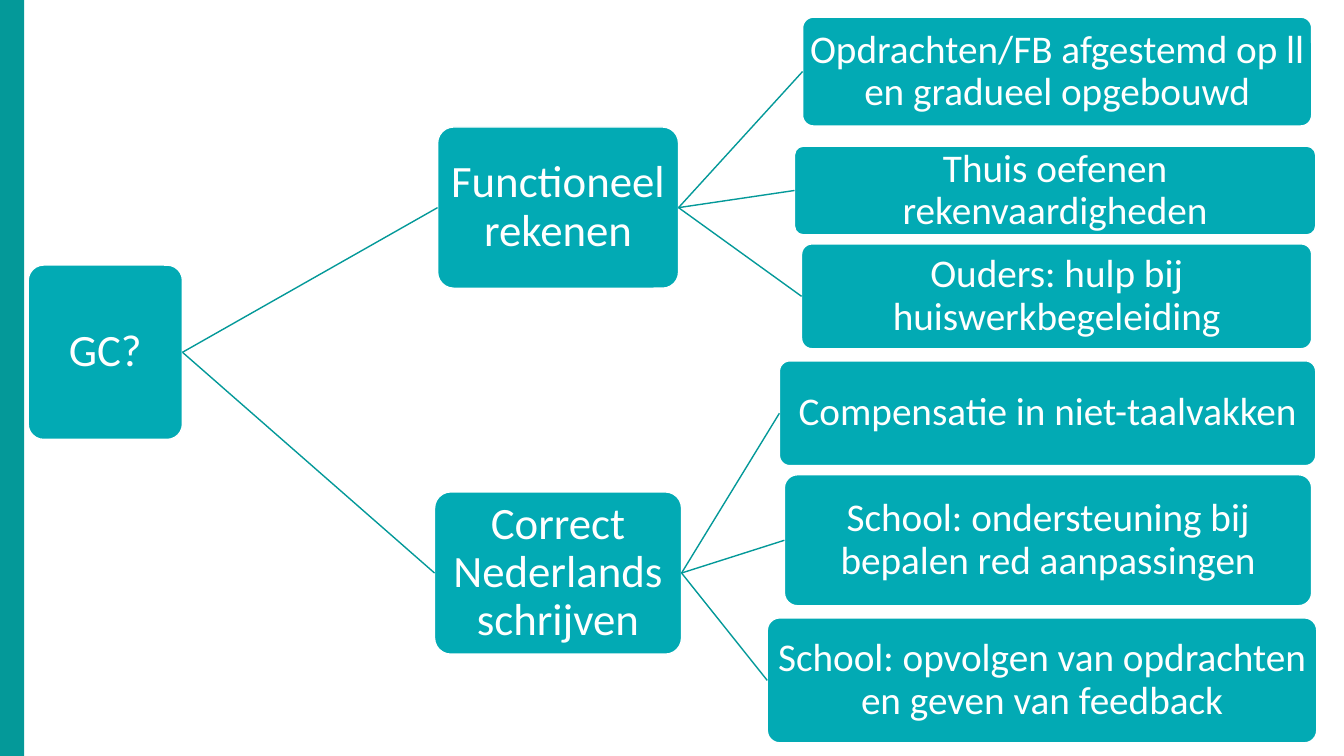
import pptx
import pptx.dml.color
import pptx.enum.shapes
import pptx.enum.text
import pptx.util
from lxml import etree

Inches = pptx.util.Inches
Pt = pptx.util.Pt
SHAPES = pptx.enum.shapes.MSO_SHAPE

TEAL = pptx.dml.color.RGBColor(0x04, 0x99, 0x99)
TURQUOISE = pptx.dml.color.RGBColor(0x02, 0xAA, 0xB4)
WHITE = pptx.dml.color.RGBColor(0xFF, 0xFF, 0xFF)

SLIDE_BOX = (0, 0, 13.33, 7.5)
TREE_BOX = (0.28, 0.17, 12.78, 7.2)
LEFT_SITE, RIGHT_SITE = 1, 3

FRAME_FORMAT = {
    "word_wrap": True,
    "vertical_anchor": pptx.enum.text.MSO_ANCHOR.MIDDLE,
    "margin_left": Inches(0.02),
    "margin_top": Inches(0.02),
    "margin_right": Inches(0.02),
    "margin_bottom": Inches(0.02),
}
PARAGRAPH_FORMAT = {
    "alignment": pptx.enum.text.PP_ALIGN.CENTER,
    "line_spacing": 0.9,
}

QUESTION = ("GC?", (0, 2.46, 1.53, 1.73))
BRANCHES = [
    ("Functioneel rekenen", (4.06, 1.09, 2.39, 1.6), [
        ("Opdrachten/FB afgestemd op ll en gradueel opgebouwd", (7.68, 0, 5.05, 1.08)),
        ("Thuis oefenen rekenvaardigheden", (7.6, 1.28, 5.17, 0.88)),
        ("Ouders: hulp bij huiswerkbegeleiding", (7.67, 2.25, 5.06, 1.04)),
    ]),
    ("Correct Nederlands schrijven", (4.03, 4.71, 2.45, 1.61), [
        ("Compensatie in niet-taalvakken", (7.45, 3.41, 5.32, 1.04)),
        ("School: ondersteuning bij bepalen red aanpassingen", (7.5, 4.54, 5.23, 1.3)),
        ("School: opvolgen van opdrachten en geven van feedback", (7.33, 5.96, 5.45, 1.24)),
    ]),
]


def apply_format(target, values):
    for name, value in values.items():
        setattr(target, name, value)


def add_side_band(slide, box):
    left, top, _, height = box
    band = slide.shapes.add_shape(
        SHAPES.RECTANGLE, Inches(left), Inches(top), Inches(0.24), Inches(height))
    band.shadow.inherit = False
    band.fill.solid()
    band.fill.fore_color.rgb = TEAL
    band.line.fill.background()


def add_node(slide, box, text, size):
    node = slide.shapes.add_shape(
        SHAPES.ROUNDED_RECTANGLE, *(Inches(length) for length in box))
    node.adjustments[0] = 0.1
    node.shadow.inherit = False
    node.fill.solid()
    node.fill.fore_color.rgb = TURQUOISE
    node.line.color.rgb = WHITE
    node.line.width = Pt(1)
    apply_format(node.text_frame, FRAME_FORMAT)
    paragraph = node.text_frame.paragraphs[0]
    apply_format(paragraph, PARAGRAPH_FORMAT)
    label = paragraph.add_run()
    label.text = text
    apply_format(label.font, {"name": "Calibri", "size": Pt(size)})
    label.font.color.rgb = WHITE
    return node


def link(slide, parent, child):
    branch_line = slide.shapes.add_connector(
        pptx.enum.shapes.MSO_CONNECTOR.STRAIGHT, 0, 0, 0, 0)
    branch_line.begin_connect(parent, RIGHT_SITE)
    branch_line.end_connect(child, LEFT_SITE)
    branch_line.line.color.rgb = TEAL
    branch_line.line.width = Pt(1)
    etree.SubElement(
        branch_line._element.spPr, pptx.oxml.ns.qn("a:effectLst"))


def add_tree(slide, box):
    def place(offset):
        left, top, width, height = offset
        return box[0] + left, box[1] + top, width, height

    question_text, question_box = QUESTION
    question = add_node(slide, place(question_box), question_text, 32)
    for subject_text, subject_box, measures in BRANCHES:
        subject = add_node(slide, place(subject_box), subject_text, 32)
        link(slide, question, subject)
        for measure_text, measure_box in measures:
            measure = add_node(slide, place(measure_box), measure_text, 28)
            link(slide, subject, measure)


def main():
    deck = pptx.Presentation()
    deck.slide_width = Inches(SLIDE_BOX[2])
    deck.slide_height = Inches(SLIDE_BOX[3])
    slide = deck.slides.add_slide(deck.slide_layouts[6])
    add_side_band(slide, SLIDE_BOX)
    add_tree(slide, TREE_BOX)
    deck.save("out.pptx")


if __name__ == "__main__":
    main()
